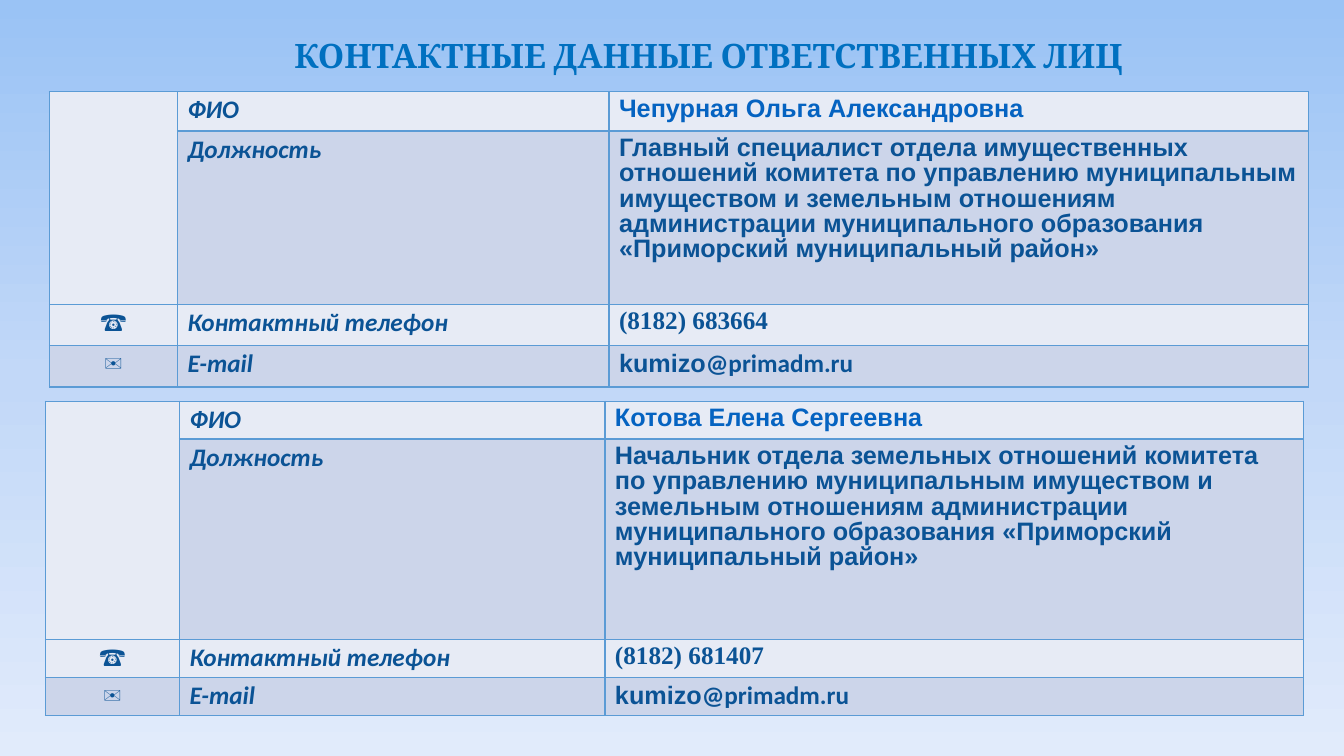
from copy import deepcopy

from lxml.etree import SubElement
from pptx import Presentation
from pptx.dml.color import RGBColor
from pptx.enum.text import MSO_ANCHOR, PP_ALIGN
from pptx.oxml.ns import qn
from pptx.util import Inches, Pt

LIGHT, DARK, LINE = "E7EBF5", "CCD5EA", "5B9BD5"
INK, LINK = "0B5395", "0563C1"


def color(code):
    return RGBColor.from_string(code)


def paint(slide):
    """Vertical background gradient with three stops."""
    fill = slide.background.fill
    fill.gradient()
    stops = next(slide.element.iter(qn("a:gsLst")))
    stops.append(deepcopy(stops[-1]))
    shades = [(0, "9AC3F5"), (0.5, "C2D8F8"), (1, "E1EBFB")]
    for stop, (place, code) in zip(fill.gradient_stops, shades):
        stop.position = place
        stop.color.rgb = color(code)
    fill.gradient_angle = 270


def add_title(slide, text, left, top, width, height):
    title = slide.shapes.title
    title.left, title.top = Inches(left), Inches(top)
    title.width, title.height = Inches(width), Inches(height)
    frame = title.text_frame
    frame.text = text
    frame.vertical_anchor = MSO_ANCHOR.MIDDLE
    para = frame.paragraphs[0]
    para.alignment = PP_ALIGN.CENTER
    font = para.font
    font.name, font.size, font.bold = "Cambria", Pt(24), True
    font.color.rgb = color("0070C0")


def frame_cell(cell, code):
    """Thin border on every side, then the fill."""
    props = cell._tc.get_or_add_tcPr()
    for side in ("a:lnL", "a:lnR", "a:lnT", "a:lnB"):
        line = SubElement(props, qn(side), w=str(Pt(1)))
        solid = SubElement(line, qn("a:solidFill"))
        SubElement(solid, qn("a:srgbClr"), val=LINE)
    cell.fill.solid()
    cell.fill.fore_color.rgb = color(code)


def write(cell, runs, code=INK, bold=True, italic=False, align=PP_ALIGN.LEFT):
    """Fill a cell with runs given as (text, font name) pairs."""
    para = cell.text_frame.paragraphs[0]
    para.alignment, para.line_spacing = align, 0.9
    font = para.font
    font.size, font.bold, font.italic = Pt(18), bold, italic
    font.color.rgb = color(code)
    for text, name in runs:
        run = para.add_run()
        run.text, run.font.name = text, name


def add_card(slide, left, top, cols, rows, person, post, phone):
    """Contact table: icon, label and value columns."""
    table = slide.shapes.add_table(
        len(rows), len(cols), Inches(left), Inches(top),
        Inches(sum(cols)), Inches(sum(rows))).table
    table.first_row = table.horz_banding = False
    for col, width in zip(table.columns, cols):
        col.width = Inches(width)
    for row, height in zip(table.rows, rows):
        row.height = Inches(height)

    lines = [
        ("", "ФИО", [(person, "Arial")], LINK),
        ("", "Должность", [(post, "Arial")], INK),
        ("☎", "Контактный телефон", [(phone, "Times New Roman")], INK),
        ("✉", "E-mail", [("kumizo", "Arial"), ("@primadm.ru", "Calibri")], INK),
    ]
    for i, (icon, label, value, code) in enumerate(lines):
        cells = [table.cell(i, j) for j in range(len(cols))]
        for cell in cells:
            frame_cell(cell, DARK if i % 2 else LIGHT)
        if icon:
            write(cells[0], [(icon, "Calibri")], bold=False, align=PP_ALIGN.CENTER)
        write(cells[1], [(label, "Calibri")], italic=True)
        write(cells[2], value, code)
    table.cell(0, 0).merge(table.cell(1, 0))


def main():
    deck = Presentation()
    deck.slide_width, deck.slide_height = Inches(13.33), Inches(7.5)
    slide = deck.slides.add_slide(deck.slide_layouts[5])
    paint(slide)
    add_title(slide, "КОНТАКТНЫЕ ДАННЫЕ ОТВЕТСТВЕННЫХ ЛИЦ", 0.73, 0.3, 12.6, 0.5)
    add_card(
        slide, 0.49, 0.91, [1.27, 4.28, 6.94], [0.39, 1.72, 0.41, 0.41],
        "Чепурная Ольга Александровна",
        "Главный специалист отдела имущественных отношений комитета "
        "по управлению муниципальным имуществом и земельным отношениям "
        "администрации муниципального образования "
        "«Приморский муниципальный район»",
        "(8182) 683664")
    add_card(
        slide, 0.45, 3.98, [1.33, 4.22, 6.93], [0.37, 1.99, 0.37, 0.37],
        "Котова Елена Сергеевна",
        "Начальник отдела земельных отношений комитета "
        "по управлению муниципальным имуществом и земельным отношениям "
        "администрации муниципального образования "
        "«Приморский муниципальный район»",
        "(8182) 681407")
    deck.save("out.pptx")


if __name__ == "__main__":
    main()
